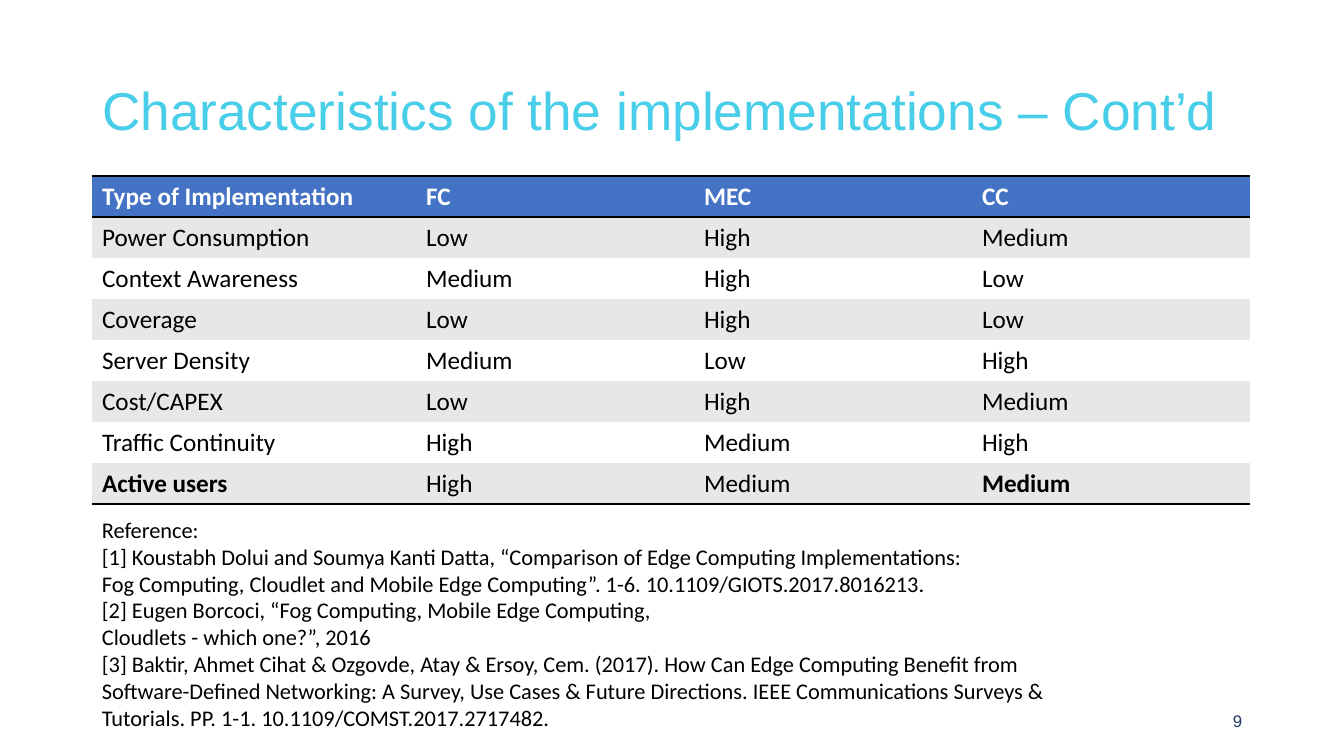
from pptx import Presentation
from pptx.dml.color import RGBColor
from pptx.enum.text import MSO_ANCHOR as Anchor, MSO_AUTO_SIZE as AutoSize, PP_ALIGN as Align
from pptx.oxml.ns import qn
from pptx.util import Emu, Pt
from lxml.etree import SubElement

EMU_PER_PX = 12192000 / 1344
NO_GRID_STYLE = "{2D5ABB26-0587-4C30-8999-92F81FD0307C}"

HEADER = ["Type of Implementation", "FC", "MEC", "CC"]
RATINGS = [
    ["Power Consumption", "Low", "High", "Medium"],
    ["Context Awareness", "Medium", "High", "Low"],
    ["Coverage", "Low", "High", "Low"],
    ["Server Density", "Medium", "Low", "High"],
    ["Cost/CAPEX", "Low", "High", "Medium"],
    ["Traffic Continuity", "High", "Medium", "High"],
    ["Active users", "High", "Medium", "Medium"],
]
BOLD_CELLS = {(len(RATINGS), 0), (len(RATINGS), 3)}
REFERENCES = [
    "Reference:\n[1] Koustabh Dolui and Soumya Kanti Datta, "
    "“Comparison of Edge Computing Implementations:",
    "Fog Computing, Cloudlet and Mobile Edge Computing”. 1-6. 10.1109/GIOTS.2017.8016213.",
    "[2] Eugen Borcoci, “Fog Computing, Mobile Edge Computing,",
    "Cloudlets - which one?”, 2016",
    "[3] Baktir, Ahmet Cihat & Ozgovde, Atay & Ersoy, Cem. (2017). How Can Edge Computing "
    "Benefit from Software-Defined Networking: A Survey, Use Cases & Future Directions. "
    "IEEE Communications Surveys & Tutorials. PP. 1-1. 10.1109/COMST.2017.2717482.",
]


def px(length):
    return Emu(round(length * EMU_PER_PX))


def color(value):
    return RGBColor.from_string(value)


class Page:
    heading_font, body_font = "Arial", "Calibri"
    cyan, navy, blue = "48CEE9", "203864", "4472C4"
    gray, white, black = "E7E7E7", "FFFFFF", "000000"

    def __init__(self, deck):
        self.slide = deck.slides.add_slide(deck.slide_layouts[5])

    def add_text(self, para, text, font, size, ink, bold=False):
        """Add the text as runs, with a line break at each newline."""
        for index, line in enumerate(text.split("\n")):
            if index:
                para.add_line_break()
            span = para.add_run()
            span.text = line
            span.font.name, span.font.size, span.font.bold = font, Pt(size), bold
            span.font.color.rgb = color(ink)

    def title(self, text, left, top, width, height):
        box = self.slide.shapes.title
        box.left, box.top, box.width, box.height = map(px, (left, top, width, height))
        box.text_frame.vertical_anchor = Anchor.MIDDLE
        box.text_frame.auto_size = AutoSize.NONE
        para = box.text_frame.paragraphs[0]
        para.alignment, para.line_spacing = Align.LEFT, 0.9
        self.add_text(para, text, self.heading_font, 38, self.cyan)

    def text(self, lines, left, top, width, height, font, size, ink,
             align=Align.LEFT, anchor=Anchor.TOP):
        box = self.slide.shapes.add_textbox(*map(px, (left, top, width, height)))
        frame = box.text_frame
        frame.word_wrap, frame.vertical_anchor = True, anchor
        for index, line in enumerate(lines):
            para = frame.add_paragraph() if index else frame.paragraphs[0]
            para.alignment = align
            self.add_text(para, line, font, size, ink)

    def rule(self, cell, edge):
        """Draw a 2 pt line on one edge of a cell; call before filling it."""
        properties = cell._tc.get_or_add_tcPr()
        line = SubElement(properties, qn(f"a:{edge}"), w=str(Pt(2)))
        SubElement(SubElement(line, qn("a:solidFill")), qn("a:srgbClr"), val=self.black)

    def table(self, rows, left, top, widths, row_height, bold_cells):
        size = sum(widths), row_height * len(rows)
        holder = self.slide.shapes.add_table(
            len(rows), len(widths), *map(px, (left, top, *size)))
        for style in holder.element.iter(qn("a:tableStyleId")):
            style.text = NO_GRID_STYLE
        grid = holder.table
        for column, width in zip(grid.columns, widths):
            column.width = px(width)
        for r, values in enumerate(rows):
            grid.rows[r].height = px(row_height)
            head = r == 0
            fill = self.blue if head else self.gray if r % 2 else self.white
            for c, value in enumerate(values):
                cell = grid.cell(r, c)
                if head:
                    self.rule(cell, "lnT")
                if r in (0, len(rows) - 1):
                    self.rule(cell, "lnB")
                cell.fill.solid()
                cell.fill.fore_color.rgb = color(fill)
                self.add_text(cell.text_frame.paragraphs[0], value, self.body_font, 18,
                              self.white if head else self.black,
                              head or (r, c) in bold_cells)


def main():
    deck = Presentation()
    deck.slide_width, deck.slide_height = px(1344), px(756)
    page = Page(deck)
    page.title("Characteristics of the implementations – Cont’d", 92, 40, 1160, 146)
    page.text(["9"], 949, 701, 303, 40, page.heading_font, 12, page.navy,
              Align.RIGHT, Anchor.MIDDLE)
    page.table([HEADER, *RATINGS], 92, 176, [324, 278, 278, 278], 41, BOLD_CELLS)
    page.text(REFERENCES, 92, 511, 995, 228, page.body_font, 16, page.black)
    deck.save("out.pptx")


if __name__ == "__main__":
    main()
